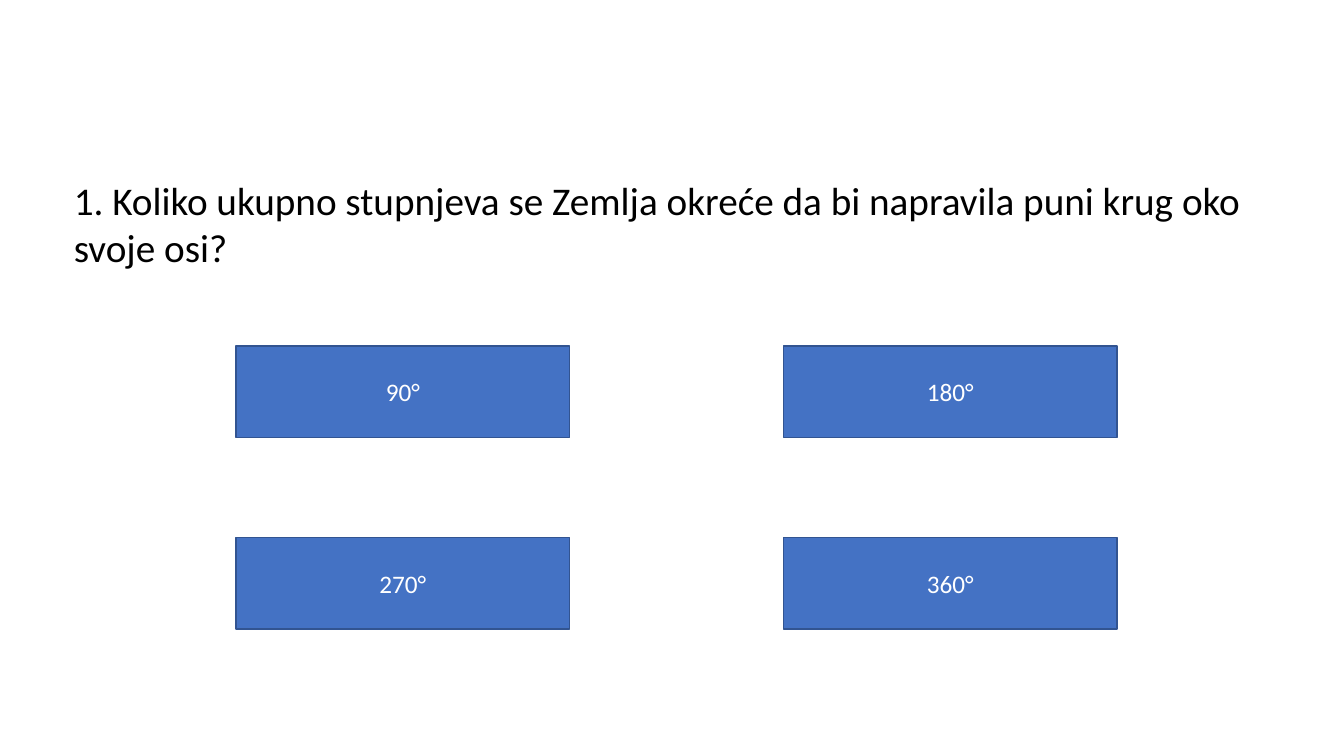
from dataclasses import dataclass

from pptx import Presentation
from pptx.dml.color import RGBColor
from pptx.enum.shapes import MSO_SHAPE
from pptx.enum.text import MSO_ANCHOR, MSO_AUTO_SIZE, PP_ALIGN
from pptx.util import Pt

RECTANGLE = MSO_SHAPE.RECTANGLE
TOP, MIDDLE = MSO_ANCHOR.TOP, MSO_ANCHOR.MIDDLE
LEFT, CENTER = PP_ALIGN.LEFT, PP_ALIGN.CENTER
NO_AUTOFIT = MSO_AUTO_SIZE.NONE
TITLE_ONLY = 5


@dataclass(frozen=True)
class Theme:
    font = "Calibri"
    question_size = Pt(28)
    answer_size = Pt(18)
    question_color = RGBColor(0x00, 0x00, 0x00)
    answer_color = RGBColor(0xFF, 0xFF, 0xFF)
    answer_fill = RGBColor(0x44, 0x72, 0xC4)
    answer_line = RGBColor(0x32, 0x54, 0x91)


theme = Theme()


def write_text(shape, text, size, color, align, anchor):
    frame = shape.text_frame
    frame.word_wrap = True
    frame.auto_size = NO_AUTOFIT
    frame.vertical_anchor = anchor
    para = frame.paragraphs[0]
    para.alignment = align
    span = para.add_run()
    span.text = text
    span.font.name = theme.font
    span.font.size = size
    span.font.color.rgb = color


deck = Presentation()
deck.slide_width, deck.slide_height = Pt(960), Pt(540)
page = deck.slides.add_slide(deck.slide_layouts[TITLE_ONLY])

question = page.shapes.title
question.left, question.top = Pt(45.5), Pt(122.5)
question.width, question.height = Pt(850), Pt(75)
write_text(
    question,
    "1. Koliko ukupno stupnjeva se Zemlja okreće da bi napravila puni krug oko svoje osi?",
    theme.question_size, theme.question_color, LEFT, TOP,
)

answers = ["90°", "180°", "270°", "360°"]
grid_left, grid_top = 168.5, 247
column_step, row_step = 391, 136.8

for index, answer in enumerate(answers):
    row, column = divmod(index, 2)
    box = page.shapes.add_shape(
        RECTANGLE,
        Pt(grid_left + column * column_step), Pt(grid_top + row * row_step),
        Pt(238.5), Pt(65.5),
    )
    box.shadow.inherit = False
    box.fill.solid()
    box.fill.fore_color.rgb = theme.answer_fill
    box.line.color.rgb = theme.answer_line
    box.line.width = Pt(1)
    write_text(box, answer, theme.answer_size, theme.answer_color, CENTER, MIDDLE)

deck.save("out.pptx")
